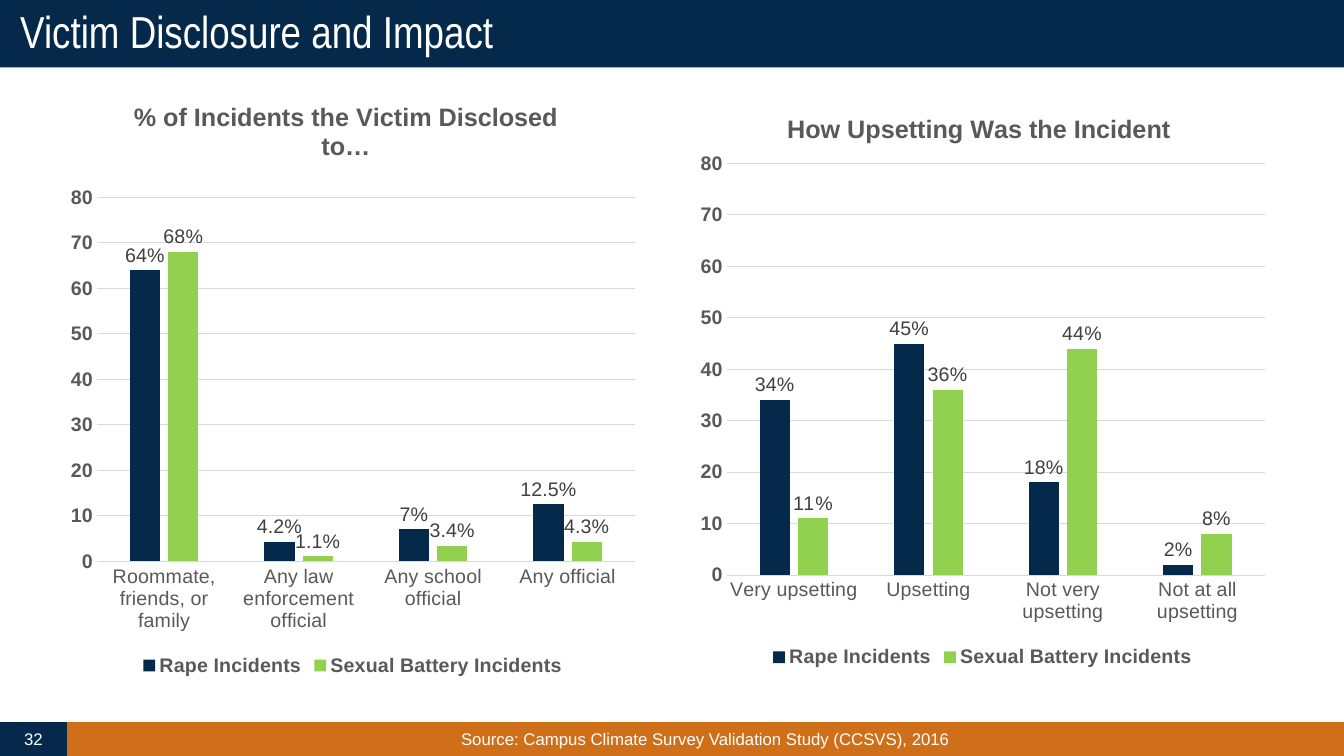
from pptx import Presentation
from pptx.chart.data import CategoryChartData
from pptx.dml.color import RGBColor
from pptx.enum.chart import XL_CHART_TYPE, XL_LABEL_POSITION, XL_LEGEND_POSITION, XL_TICK_MARK
from pptx.enum.shapes import MSO_SHAPE
from pptx.enum.text import MSO_ANCHOR, PP_ALIGN
from pptx.oxml import parse_xml
from pptx.oxml.ns import nsdecls
from pptx.util import Cm, Pt

NAVY, GREEN, ORANGE, WHITE = "04294A", "92D050", "D06F1A", "FFFFFF"
GRAY, LABEL_GRAY, RULE_GRAY = "595959", "404040", "D9D9D9"
SLIDE_W, SLIDE_H = 33.87, 19.05
BAR_H = 0.85


def rgb(value):
    return RGBColor.from_string(value)


def set_font(font, size, color, bold=False, name="Arial"):
    font.name, font.size, font.bold = name, Pt(size), bold
    font.color.rgb = rgb(color)


def add_band(s, box, text, fill, size, name="Arial", align=PP_ALIGN.CENTER, inset=0.25):
    x, y, w, h = box
    sp = s.shapes.add_shape(MSO_SHAPE.RECTANGLE, Cm(x), Cm(y), Cm(w), Cm(h))
    sp.shadow.inherit = False
    sp.fill.solid()
    sp.fill.fore_color.rgb = rgb(fill)
    sp.line.fill.background()
    tf = sp.text_frame
    tf.word_wrap = True
    tf.vertical_anchor = MSO_ANCHOR.MIDDLE
    tf.margin_left = tf.margin_right = Cm(inset)
    p = tf.paragraphs[0]
    p.text, p.alignment = text, align
    set_font(p.font, size, WHITE, name=name)
    return p


def add_header(s, box):
    p = add_band(s, box, "Victim Disclosure and Impact", NAVY, 32, "Arial Narrow",
                 PP_ALIGN.LEFT, 0.51)
    p.line_spacing = 0.9


def add_footer(s, box):
    x, y, w, h = box
    number_w = 1.69
    add_band(s, (x, y, number_w, h), "32", NAVY, 12)
    add_band(s, (x + number_w, y, w - number_w, h),
             "Source: Campus Climate Survey Validation Study (CCSVS), 2016", ORANGE, 12)


def make_layout(x, y, w=None, h=None):
    """Manual chart layout, in fractions of the chart's box."""
    inner = '<c:layoutTarget val="inner"/>' if w else ""
    size = f'<c:w val="{w}"/><c:h val="{h}"/>' if w else ""
    return parse_xml(
        f'<c:layout {nsdecls("c")}><c:manualLayout>{inner}<c:xMode val="edge"/>'
        f'<c:yMode val="edge"/><c:x val="{x}"/><c:y val="{y}"/>{size}'
        '</c:manualLayout></c:layout>')


def place(parent, layout, index):
    for old in parent.xpath("./c:layout"):
        parent.remove(old)
    parent.insert(index, layout)


def add_column_chart(s, box, title, categories, rape, battery, title_at, plot_at):
    data = CategoryChartData(number_format='General"%"')
    data.categories = categories
    data.add_series("Rape Incidents", rape)
    data.add_series("Sexual Battery Incidents", battery)
    chart = s.shapes.add_chart(XL_CHART_TYPE.COLUMN_CLUSTERED,
                               *(Cm(v) for v in box), data).chart
    set_font(chart.font, 10, "000000")

    # Title
    chart.has_title = True
    p = chart.chart_title.text_frame.paragraphs[0]
    p.text = title
    set_font(p.font, 18, GRAY, True)
    chart.chart_title.include_in_layout = False
    place(chart.element.xpath("./c:chart/c:title")[0], make_layout(*title_at), 1)
    place(chart.element.xpath("./c:chart/c:plotArea")[0], make_layout(*plot_at), 0)

    # Legend
    chart.has_legend = True
    chart.legend.position = XL_LEGEND_POSITION.BOTTOM
    chart.legend.include_in_layout = False
    set_font(chart.legend.font, 14, GRAY, True)

    # Axes
    for axis in (chart.category_axis, chart.value_axis):
        axis.major_tick_mark = axis.minor_tick_mark = XL_TICK_MARK.NONE
    set_font(chart.category_axis.tick_labels.font, 14, GRAY)
    set_font(chart.value_axis.tick_labels.font, 14, GRAY, True)
    axis = chart.value_axis
    axis.minimum_scale, axis.maximum_scale, axis.major_unit = 0, 80, 10
    axis.tick_labels.number_format = "General"
    axis.tick_labels.number_format_is_linked = False
    axis.format.line.fill.background()
    for line in (axis.major_gridlines.format.line, chart.category_axis.format.line):
        line.color.rgb = rgb(RULE_GRAY)
        line.width = Pt(0.75)

    # Columns and their labels
    plot = chart.plots[0]
    plot.gap_width, plot.overlap, plot.vary_by_categories = 219, -27, False
    for series, color in zip(plot.series, (NAVY, GREEN)):
        series.format.fill.solid()
        series.format.fill.fore_color.rgb = rgb(color)
        labels = series.data_labels
        labels.show_value = True
        labels.number_format = 'General"%"'
        labels.number_format_is_linked = False
        labels.position = XL_LABEL_POSITION.OUTSIDE_END
        set_font(labels.font, 14, LABEL_GRAY)


def main():
    prs = Presentation()
    prs.slide_width, prs.slide_height = Cm(SLIDE_W), Cm(SLIDE_H)
    s = prs.slides.add_slide(prs.slide_layouts[6])
    add_header(s, (0, 0, SLIDE_W, 1.7))
    add_column_chart(
        s, (17.35, 2.12, 14.82, 14.82), "How Upsetting Was the Incident",
        ["Very upsetting", "Upsetting", "Not very upsetting", "Not at all upsetting"],
        (34, 45, 18, 2), (11, 36, 44, 8), (0.16, 0.04), (0.065, 0.135, 0.915, 0.7))
    add_column_chart(
        s, (1.48, 2.12, 14.82, 15.03), "% of Incidents the Victim Disclosed to…",
        ["Roommate, friends, or family", "Any law enforcement official",
         "Any school official", "Any official"],
        (64, 4.2, 7, 12.5), (68, 1.1, 3.4, 4.3), (0.12, 0.02), (0.065, 0.19, 0.915, 0.61))
    add_footer(s, (0, SLIDE_H - BAR_H, SLIDE_W, BAR_H))
    prs.save("out.pptx")


if __name__ == "__main__":
    main()
